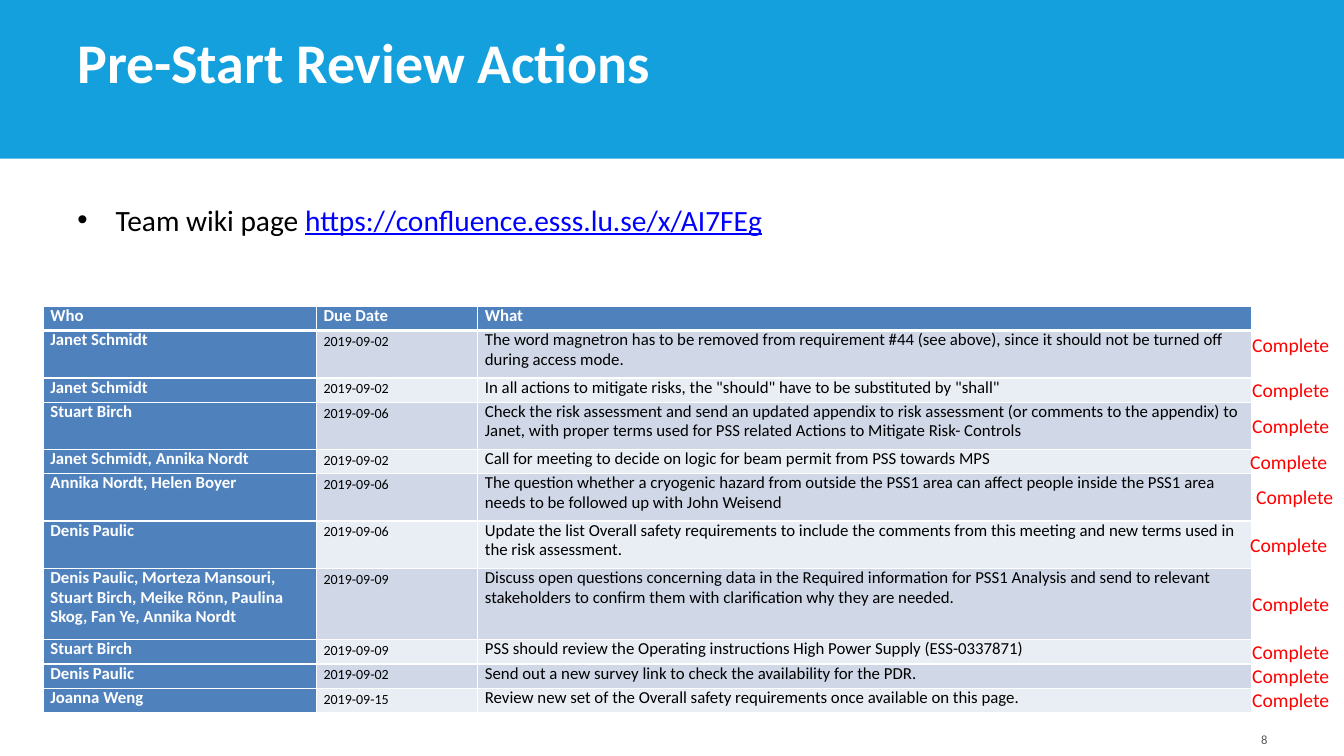
from itertools import accumulate

from lxml.etree import SubElement
from pptx import Presentation
from pptx.dml.color import RGBColor
from pptx.enum.shapes import MSO_SHAPE
from pptx.enum.text import MSO_ANCHOR, MSO_AUTO_SIZE, PP_ALIGN
from pptx.oxml import parse_xml
from pptx.oxml.ns import nsdecls, qn
from pptx.util import Inches, Pt

COLOURS = {
    "banner": "13A0DD", "white": "FFFFFF", "black": "000000", "link": "0000FF",
    "number": "595959", "head": "4F81BD", "odd": "D0D8E8", "even": "E9EDF4", "done": "FF0000",
}
SLIDE_WIDTH, SLIDE_HEIGHT = 13.33, 7.5
LINE = 0.24
COLUMN_WIDTHS = (2.71, 1.6, 7.67)
LABEL_SIZE = (0.98, 0.34)
LABEL_NUDGES = {0: (0, -0.09), 3: (-0.02, 0), 4: (0.04, 0), 5: (-0.02, 0)}
HEADINGS = ("Who", "Due Date", "What")
ACTIONS = (
    (2, "Janet Schmidt", "2019-09-02",
     "The word magnetron has to be removed from requirement #44 (see above), "
     "since it should not be turned off during access mode."),
    (1, "Janet Schmidt", "2019-09-02",
     'In all actions to mitigate risks, the "should" have to be substituted by "shall"'),
    (2, "Stuart Birch", "2019-09-06",
     "Check the risk assessment and send an updated appendix to risk assessment "
     "(or comments to the appendix) to Janet, with proper terms used for PSS related "
     "Actions to Mitigate Risk- Controls"),
    (1, "Janet Schmidt, Annika Nordt", "2019-09-02",
     "Call for meeting to decide on logic for beam permit from PSS towards MPS"),
    (2, "Annika Nordt, Helen Boyer", "2019-09-06",
     "The question whether a cryogenic hazard from outside the PSS1 area can affect "
     "people inside the PSS1 area needs to be followed up with John Weisend"),
    (2, "Denis Paulic", "2019-09-06",
     "Update the list Overall safety requirements to include the comments from this "
     "meeting and new terms used in the risk assessment."),
    (3, "Denis Paulic, Morteza Mansouri, Stuart Birch, Meike Rönn, Paulina Skog, "
     "Fan Ye, Annika Nordt", "2019-09-09",
     "Discuss open questions concerning data in the Required information for PSS1 "
     "Analysis and send to relevant stakeholders to confirm them with clarification "
     "why they are needed."),
    (1, "Stuart Birch", "2019-09-09",
     "PSS should review the Operating instructions High Power Supply (ESS-0337871)"),
    (1, "Denis Paulic", "2019-09-02",
     "Send out a new survey link to check the availability for the PDR."),
    (1, "Joanna Weng", "2019-09-15",
     "Review new set of the Overall safety requirements once available on this page."),
)


def set_all(target, **values):
    """Set each named attribute of the target."""
    for name, value in values.items():
        setattr(target, name, value)


def place(shape, box):
    """Move a shape to a box given in inches."""
    set_all(shape, **dict(zip(("left", "top", "width", "height"), map(Inches, box))))


def add_run(paragraph, text, size, colour, **values):
    """Append a formatted run to a paragraph."""
    run = paragraph.add_run()
    run.text = text
    set_all(run.font, name="Calibri", size=Pt(size), **values)
    run.font.color.rgb = RGBColor.from_string(COLOURS[colour])


def add_label(slide, box, text, size, colour, alignment, anchor, wrap):
    """Add a one-line text box."""
    shape = slide.shapes.add_textbox(*map(Inches, box))
    set_all(shape.text_frame, word_wrap=wrap, vertical_anchor=anchor)
    paragraph = shape.text_frame.paragraphs[0]
    paragraph.alignment = alignment
    add_run(paragraph, text, size, colour)


def add_banner(slide, box):
    """Draw the coloured band with the title in it."""
    left, top, width, height = box
    band = slide.shapes.add_shape(MSO_SHAPE.RECTANGLE, *map(Inches, box))
    band.shadow.inherit = False
    band.fill.solid()
    band.fill.fore_color.rgb = RGBColor.from_string(COLOURS["banner"])
    band.line.fill.background()
    slide.shapes._spTree.insert(2, band._element)
    title = slide.shapes.title
    place(title, (left + 0.05 * width, top + 0.24 * height, 0.78 * width, 0.39 * height))
    set_all(title.text_frame, vertical_anchor=MSO_ANCHOR.BOTTOM, auto_size=MSO_AUTO_SIZE.NONE)
    paragraph = title.text_frame.paragraphs[0]
    paragraph.alignment = PP_ALIGN.LEFT
    add_run(paragraph, "Pre-Start Review Actions", 40, "white", bold=True)


def add_page_link(slide, box):
    """Fill the body placeholder with the bullet for the page address."""
    body = slide.placeholders[1]
    place(body, box)
    body.text_frame.auto_size = MSO_AUTO_SIZE.NONE
    paragraph = body.text_frame.paragraphs[0]
    properties = paragraph._p.get_or_add_pPr()
    properties.set("marL", str(Inches(0.38)))
    properties.set("indent", str(Inches(-0.38)))
    paragraph.space_before = Pt(0)
    add_run(paragraph, "Team wiki page ", 21, "black")
    add_run(paragraph, "https://confluence.esss.lu.se/x/AI7FEg", 21, "link", underline=True)


def set_borders(cell, **widths):
    """Give a cell white borders of the given widths in points."""
    properties = cell._tc.get_or_add_tcPr()
    for index, side in enumerate("LRTB"):
        border = parse_xml(f'<a:ln{side} {nsdecls("a")} w="{Pt(widths.get(side, 1))}"/>')
        fill = SubElement(border, qn("a:solidFill"))
        SubElement(fill, qn("a:srgbClr"), val=COLOURS["white"])
        properties.insert(index, border)


def fill_cell(cell, text, size, colour, fill, bold):
    """Write and format one table cell."""
    set_all(cell, margin_left=Inches(0.07), margin_right=Inches(0.07), margin_top=0,
            margin_bottom=0)
    cell.fill.solid()
    cell.fill.fore_color.rgb = RGBColor.from_string(COLOURS[fill])
    paragraph = cell.text_frame.paragraphs[0]
    set_all(paragraph, line_spacing=Pt(14), space_after=Pt(12))
    add_run(paragraph, text, size, colour, bold=bold)


def add_actions(slide, left, top):
    """Add the table of actions with a status label beside each row."""
    heights = [LINE] + [round(LINE * lines - 0.01 * (lines > 1), 2) for lines, *_ in ACTIONS]
    width = sum(COLUMN_WIDTHS)
    frame = slide.shapes.add_table(
        len(heights), len(HEADINGS), *map(Inches, (left, top, width, sum(heights))))
    table = frame.table
    for column, column_width in zip(table.columns, COLUMN_WIDTHS):
        column.width = Inches(column_width)
    for number, (row, height) in enumerate(zip(table.rows, heights)):
        row.height = Inches(height)
        texts = ACTIONS[number - 1][1:] if number else HEADINGS
        for column, (cell, text) in enumerate(zip(row.cells, texts)):
            head = number == 0 or column == 0
            band = "odd" if number % 2 else "even"
            fill_cell(cell, text, 10 if column == 1 and number else 12,
                      "white" if head else "black", "head" if head else band, head)
            set_borders(cell, **{0: {"B": 3}, 1: {"T": 3}}.get(number, {}))
    row_tops = list(accumulate(heights, initial=top))[1:]
    for index, (row_top, height) in enumerate(zip(row_tops, heights[1:])):
        across, down = LABEL_NUDGES.get(index, (0, 0))
        label_top = row_top + (height - LABEL_SIZE[1]) / 2 + down
        add_label(slide, (left + width - 0.09 + across, label_top, *LABEL_SIZE), "Complete",
                  14, "done", PP_ALIGN.LEFT, MSO_ANCHOR.TOP, False)


def main():
    """Build and save the slide."""
    presentation = Presentation()
    set_all(presentation, slide_width=Inches(SLIDE_WIDTH), slide_height=Inches(SLIDE_HEIGHT))
    slide = presentation.slides.add_slide(presentation.slide_layouts[1])
    add_banner(slide, (0, 0, SLIDE_WIDTH, 0.21 * SLIDE_HEIGHT))
    add_page_link(slide, (0.05 * SLIDE_WIDTH, 0.26 * SLIDE_HEIGHT, 12, 4.75))
    add_label(slide, (9.56, 7.06, 3.11, 0.4), "8", 9, "number", PP_ALIGN.RIGHT,
              MSO_ANCHOR.BOTTOM, True)
    add_actions(slide, 0.43, 3.04)
    presentation.save("out.pptx")


if __name__ == "__main__":
    main()
